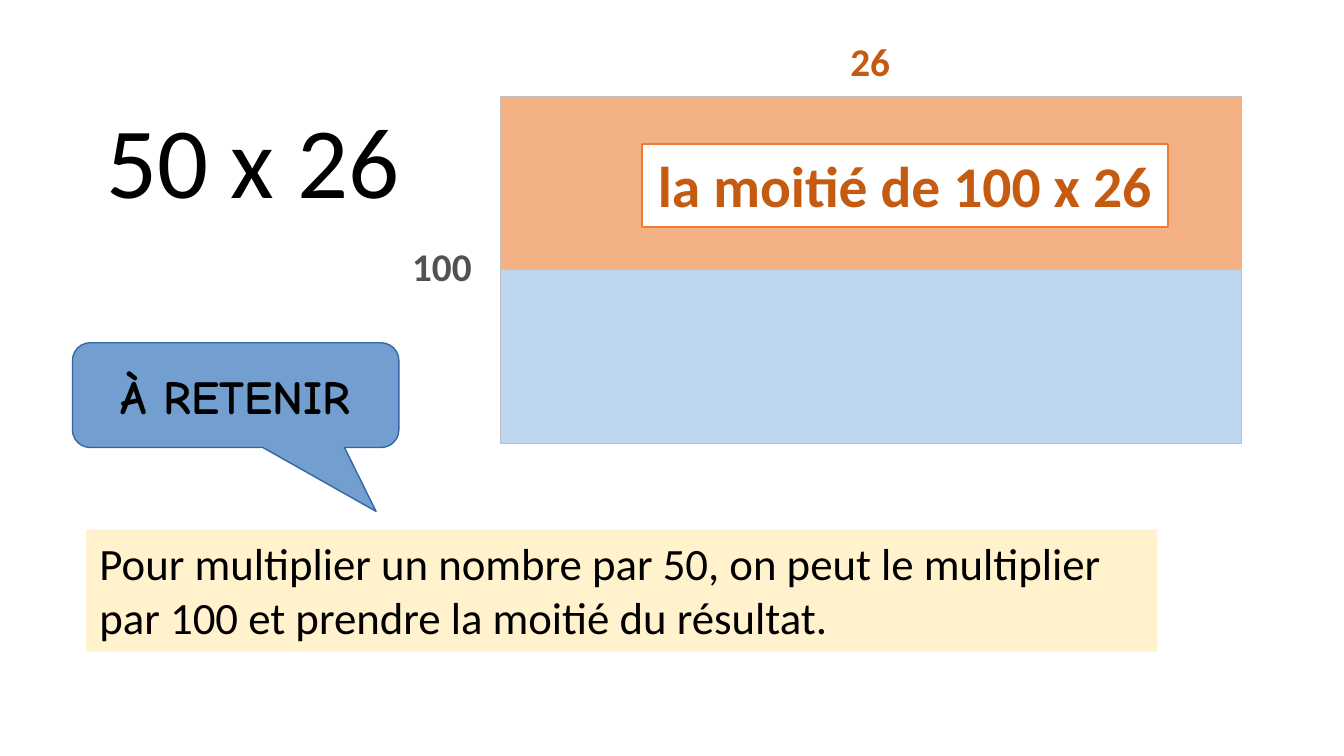
from lxml.etree import SubElement
from pptx import Presentation
from pptx.dml.color import RGBColor
from pptx.enum.shapes import MSO_SHAPE as Preset
from pptx.enum.text import MSO_ANCHOR as Anchor, PP_ALIGN as Align
from pptx.oxml.ns import qn
from pptx.util import Cm, Pt

BLACK = RGBColor(0x00, 0x00, 0x00)
WHITE = RGBColor(0xFF, 0xFF, 0xFF)
RUST = RGBColor(0xC5, 0x5A, 0x11)
ORANGE = RGBColor(0xED, 0x7D, 0x31)
PEACH = RGBColor(0xF4, 0xB1, 0x83)
SKY = RGBColor(0xBD, 0xD7, 0xEE)
CREAM = RGBColor(0xFF, 0xF2, 0xCC)
DARK_GRAY = RGBColor(0x52, 0x52, 0x52)
LIGHT_GRAY = RGBColor(0xBF, 0xBF, 0xBF)
CALLOUT_BLUE = RGBColor(0x72, 0x9F, 0xCF)
CALLOUT_EDGE = RGBColor(0x34, 0x65, 0xA4)
NO_GRID_STYLE = "{2D5ABB26-0587-4C30-8999-92F81FD0307C}"


def write(frame, text, size=24, color=BLACK, bold=False, font="Calibri",
          align=Align.LEFT, anchor=Anchor.TOP, wrap=True):
    frame.word_wrap = wrap
    frame.vertical_anchor = anchor
    paragraph = frame.paragraphs[0]
    paragraph.alignment = align
    run = paragraph.add_run()
    run.text = text
    run.font.name = font
    run.font.size = Pt(size)
    run.font.bold = bold
    run.font.color.rgb = color


class Deck:
    def __init__(self, width, height):
        self.presentation = Presentation()
        self.presentation.slide_width = Cm(width)
        self.presentation.slide_height = Cm(height)
        self.slide = self.presentation.slides.add_slide(self.presentation.slide_layouts[6])

    def label(self, box, text, **style):
        shape = self.slide.shapes.add_textbox(*map(Cm, box))
        write(shape.text_frame, text, **style)

    def panel(self, preset, box, fill, text, line=None, line_width=1, **style):
        shape = self.slide.shapes.add_shape(preset, *map(Cm, box))
        shape.shadow.inherit = False
        shape.fill.solid()
        shape.fill.fore_color.rgb = fill
        if line is None:
            shape.line.fill.background()
        else:
            shape.line.color.rgb = line
            shape.line.width = Pt(line_width)
        write(shape.text_frame, text, **style)
        return shape

    def border(self, cell, side):
        line = SubElement(cell._tc.get_or_add_tcPr(), qn(f"a:ln{side}"), w=str(Pt(0.5)))
        fill = SubElement(line, qn("a:solidFill"))
        SubElement(fill, qn("a:srgbClr"), val=str(LIGHT_GRAY))

    def grid(self, box, rows, columns):
        left, top, width, height = box
        table = self.slide.shapes.add_table(rows, columns, *map(Cm, box)).table
        table.first_row = table.horz_banding = False
        table._tbl.tblPr.find(qn("a:tableStyleId")).text = NO_GRID_STYLE
        for column in table.columns:
            column.width = Cm(width / columns)
        for r, row in enumerate(table.rows):
            row.height = Cm(height / rows)
            for c, cell in enumerate(row.cells):
                cell.margin_left = cell.margin_right = 0
                cell.margin_top = cell.margin_bottom = 0
                SubElement(cell.text_frame.paragraphs[0]._p, qn("a:endParaRPr"), sz="800")
                edges = {"L": c == 0, "R": c == columns - 1, "T": r == 0, "B": r == rows - 1}
                for side, outer in edges.items():
                    if outer:
                        self.border(cell, side)
                cell.fill.solid()
                cell.fill.fore_color.rgb = PEACH if r < rows / 2 else SKY

    def save(self):
        self.presentation.save("out.pptx")


def main():
    deck = Deck(25.4, 14.29)
    deck.label((1.63, 1.73, 6.3, 2.57), "50 x 26", size=54, align=Align.CENTER, wrap=False)
    deck.label((15.82, 0.58, 1.3, 1.14), "26", size=21, color=RUST, bold=True, wrap=False)
    deck.label((7.54, 4.45, 1.91, 1.14), "100", size=21, color=DARK_GRAY, bold=True, wrap=False)
    deck.grid((9.45, 1.83, 14.02, 6.55), 10, 22)
    deck.panel(Preset.RECTANGLE, (12.14, 2.72, 9.93, 1.57), WHITE, "la moitié de 100 x 26",
               line=ORANGE, size=30.8, color=RUST, bold=True, align=Align.CENTER)
    deck.panel(Preset.RECTANGLE, (1.63, 10.01, 20.24, 2.31), CREAM,
               "Pour multiplier un nombre par 50, on peut le multiplier "
               "par 100 et prendre la moitié du résultat.")
    callout = deck.panel(Preset.ROUNDED_RECTANGULAR_CALLOUT, (1.37, 6.48, 6.17, 1.98),
                         CALLOUT_BLUE, "À RETENIR", line=CALLOUT_EDGE, line_width=0.75,
                         size=25.4, bold=True, font="Comic Neue", align=Align.CENTER,
                         anchor=Anchor.MIDDLE, wrap=False)
    for index, value in enumerate((0.43, 1.11, 0.17)):
        callout.adjustments[index] = value
    deck.save()


if __name__ == "__main__":
    main()
